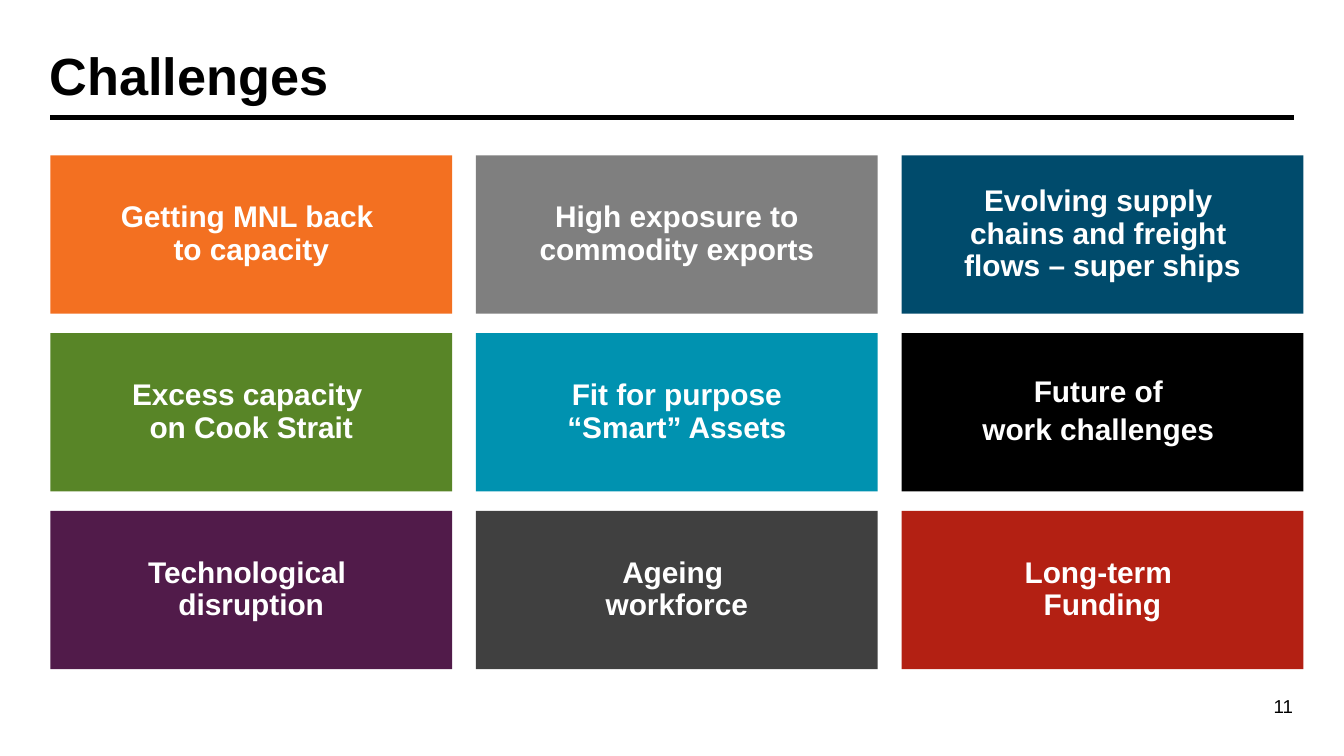
import copy
import dataclasses

import pptx
import pptx.dml.color
import pptx.enum.shapes
import pptx.enum.text
import pptx.oxml.ns
import pptx.oxml.xmlchemy
import pptx.util

RGBColor = pptx.dml.color.RGBColor
ALIGN = pptx.enum.text.PP_ALIGN
MIDDLE = pptx.enum.text.MSO_ANCHOR.MIDDLE

EMU_PER_PX = 9525
FONT = "Arial"

BLACK = RGBColor(0x00, 0x00, 0x00)
WHITE = RGBColor(0xFF, 0xFF, 0xFF)
ORANGE = RGBColor(0xF3, 0x70, 0x21)
GREY = RGBColor(0x7F, 0x7F, 0x7F)
NAVY = RGBColor(0x00, 0x4B, 0x6C)
GREEN = RGBColor(0x58, 0x85, 0x27)
TEAL = RGBColor(0x00, 0x92, 0xB0)
PLUM = RGBColor(0x51, 0x1B, 0x4A)
CHARCOAL = RGBColor(0x40, 0x40, 0x40)
RED = RGBColor(0xB3, 0x20, 0x13)

PAGE_WIDTH = 960
PAGE_HEIGHT = 540
MARGIN = 36
RULE_TOP = 84
GRID_TOP = 111
COLUMNS = 3
TILE_WIDTH = 287
TILE_HEIGHT = 113
COLUMN_GAP = 17
ROW_GAP = 14
TILE_INSET = 12


@dataclasses.dataclass(frozen=True)
class Challenge:
    text: str
    fill: RGBColor
    space_after: int = 3


CHALLENGES = [
    Challenge("Getting MNL back \vto capacity", ORANGE),
    Challenge("High exposure to commodity exports", GREY),
    Challenge("Evolving supply \vchains and freight \nflows – super ships", NAVY, 0),
    Challenge("Excess capacity \von Cook Strait", GREEN),
    Challenge("Fit for purpose\v“Smart” Assets", TEAL),
    Challenge("Future of \nwork challenges ", BLACK),
    Challenge("Technological \vdisruption", PLUM),
    Challenge("Ageing \vworkforce", CHARCOAL),
    Challenge("Long-term \vFunding", RED),
]


def px(length: int) -> pptx.util.Emu:
    return pptx.util.Emu(length * EMU_PER_PX)


def format_text(frame, size: int, color: RGBColor, bold: bool, align) -> None:
    frame.word_wrap = True
    frame.auto_size = pptx.enum.text.MSO_AUTO_SIZE.NONE
    frame.vertical_anchor = MIDDLE
    for para in frame.paragraphs:
        para.alignment = align
        for span in para.runs:
            span.font.name = FONT
            span.font.size = pptx.util.Pt(size)
            span.font.bold = bold
            span.font.color.rgb = color
        for line_break in para._p.findall(pptx.oxml.ns.qn("a:br")):
            line_break.append(copy.deepcopy(para.runs[0]._r.rPr))


def add_title(page, text: str) -> None:
    title = page.shapes.title
    title.left, title.top, title.width, title.height = map(px, (26, 22, 756, 62))
    title.text_frame.text = text
    format_text(title.text_frame, 28, BLACK, True, ALIGN.LEFT)


def add_title_rule(page) -> None:
    rule = page.shapes.add_connector(
        pptx.enum.shapes.MSO_CONNECTOR.STRAIGHT,
        px(MARGIN),
        px(RULE_TOP),
        px(PAGE_WIDTH - MARGIN),
        px(RULE_TOP),
    )
    rule.line.color.rgb = BLACK
    rule.line.width = pptx.util.Pt(3)
    rule._element.spPr.append(pptx.oxml.xmlchemy.OxmlElement("a:effectLst"))


def add_page_number(page, number: int) -> None:
    box = page.shapes.add_textbox(px(709), px(490), px(224), px(29))
    box.text_frame.text = str(number)
    format_text(box.text_frame, 10, BLACK, False, ALIGN.RIGHT)


def add_tile(page, challenge: Challenge, row: int, column: int) -> None:
    tile = page.shapes.add_shape(
        pptx.enum.shapes.MSO_SHAPE.RECTANGLE,
        px(MARGIN + column * (TILE_WIDTH + COLUMN_GAP)),
        px(GRID_TOP + row * (TILE_HEIGHT + ROW_GAP)),
        px(TILE_WIDTH),
        px(TILE_HEIGHT),
    )
    tile.shadow.inherit = False
    tile.fill.solid()
    tile.fill.fore_color.rgb = challenge.fill
    tile.line.fill.background()
    frame = tile.text_frame
    frame.margin_left = frame.margin_right = px(TILE_INSET)
    frame.margin_top = frame.margin_bottom = px(TILE_INSET)
    frame.text = challenge.text
    format_text(frame, 16, WHITE, True, ALIGN.CENTER)
    for para in frame.paragraphs:
        para.line_spacing = 0.9
        para.space_after = pptx.util.Pt(challenge.space_after)


def main() -> None:
    deck = pptx.Presentation()
    deck.slide_width = px(PAGE_WIDTH)
    deck.slide_height = px(PAGE_HEIGHT)
    page = deck.slides.add_slide(deck.slide_layouts.get_by_name("Title Only"))
    add_page_number(page, 11)
    add_title_rule(page)
    add_title(page, "Challenges")
    for index, challenge in enumerate(CHALLENGES):
        add_tile(page, challenge, *divmod(index, COLUMNS))
    deck.save("out.pptx")


if __name__ == "__main__":
    main()
